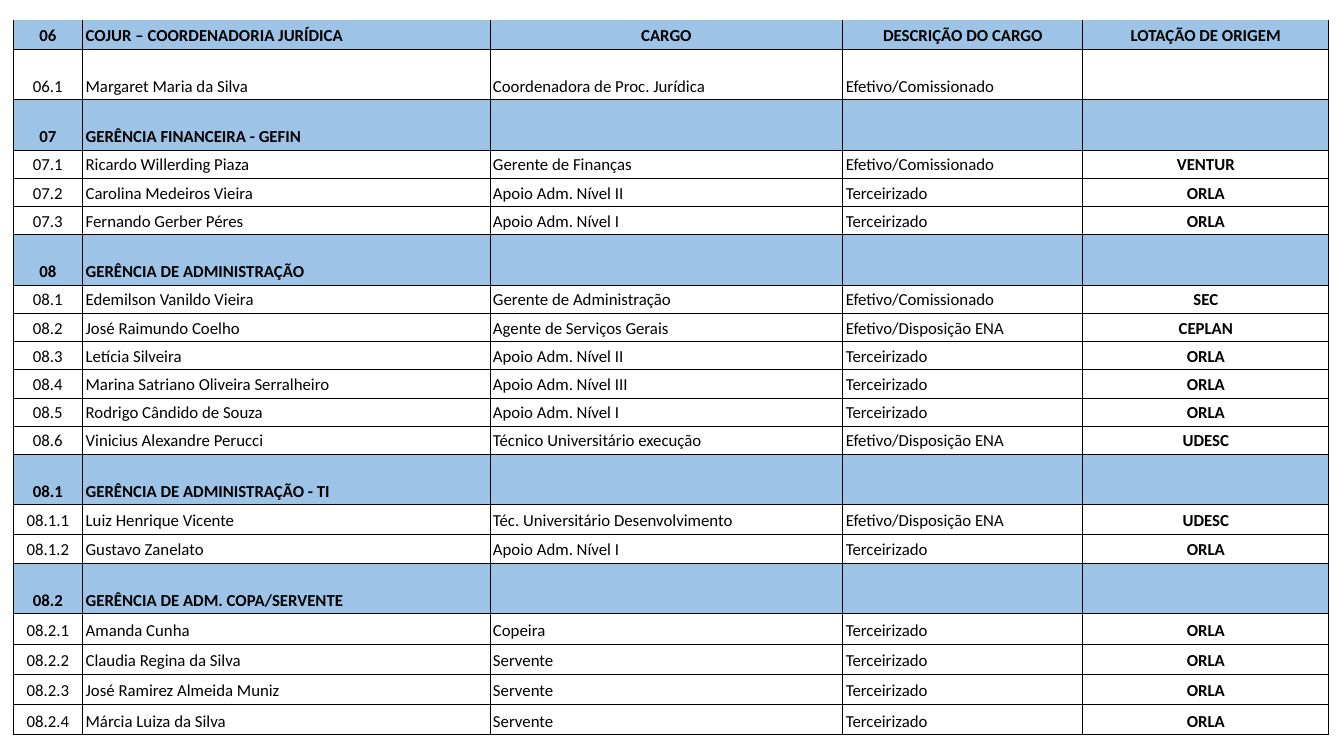
from lxml import etree
from pptx import Presentation
from pptx.dml.color import RGBColor
from pptx.enum.text import MSO_ANCHOR, PP_ALIGN
from pptx.oxml.ns import qn
from pptx.util import Inches, Pt

BOTTOM = MSO_ANCHOR.BOTTOM
LEFT = PP_ALIGN.LEFT
CENTER = PP_ALIGN.CENTER

THEME = {
    "font": "Calibri",
    "size": Pt(12),
    "text": RGBColor.from_string("000000"),
    "heading_fill": RGBColor.from_string("9DC3E6"),
    "member_fill": RGBColor.from_string("FFFFFF"),
    "border": "000000",
    "border_width": Pt(0.75),
}
CELL_FORMAT = {
    "vertical_anchor": BOTTOM,
    "margin_left": Inches(0.03),
    "margin_right": Inches(0.03),
    "margin_top": Inches(0.03),
    "margin_bottom": Inches(0.03),
}

COLUMN_WIDTHS = [0.69, 4.04, 3.5, 2.38, 2.44]
COLUMN_ALIGNMENTS = [CENTER, LEFT, LEFT, LEFT, CENTER]
HEADER_ALIGNMENTS = [CENTER, LEFT, CENTER, CENTER, CENTER]
ORIGIN_COLUMN = 4

COMMISSIONED = "Efetivo/Comissionado"
SECONDED = "Efetivo/Disposição ENA"
OUTSOURCED = "Terceirizado"

SECTIONS = [
    (0.29, 0.5, ["06", "COJUR – COORDENADORIA JURÍDICA", "CARGO",
                 "DESCRIÇÃO DO CARGO", "LOTAÇÃO DE ORIGEM"], [
        ("Margaret Maria da Silva", "Coordenadora de Proc. Jurídica", COMMISSIONED, ""),
    ]),
    (0.5, 0.28, ["07", "GERÊNCIA FINANCEIRA - GEFIN", "", "", ""], [
        ("Ricardo Willerding Piaza", "Gerente de Finanças", COMMISSIONED, "VENTUR"),
        ("Carolina Medeiros Vieira", "Apoio Adm. Nível II", OUTSOURCED, "ORLA"),
        ("Fernando Gerber Péres", "Apoio Adm. Nível I", OUTSOURCED, "ORLA"),
    ]),
    (0.5, 0.28, ["08", "GERÊNCIA DE ADMINISTRAÇÃO", "", "", ""], [
        ("Edemilson Vanildo Vieira", "Gerente de Administração", COMMISSIONED, "SEC"),
        ("José Raimundo Coelho", "Agente de Serviços Gerais", SECONDED, "CEPLAN"),
        ("Letícia Silveira", "Apoio Adm. Nível II", OUTSOURCED, "ORLA"),
        ("Marina Satriano Oliveira Serralheiro", "Apoio Adm. Nível III", OUTSOURCED, "ORLA"),
        ("Rodrigo Cândido de Souza", "Apoio Adm. Nível I", OUTSOURCED, "ORLA"),
        ("Vinicius Alexandre Perucci", "Técnico Universitário execução", SECONDED, "UDESC"),
    ]),
    (0.5, 0.29, ["08.1", "GERÊNCIA DE ADMINISTRAÇÃO - TI", "", "", ""], [
        ("Luiz Henrique Vicente", "Téc. Universitário Desenvolvimento", SECONDED, "UDESC"),
        ("Gustavo Zanelato", "Apoio Adm. Nível I", OUTSOURCED, "ORLA"),
    ]),
    (0.5, 0.3, ["08.2", "GERÊNCIA DE ADM. COPA/SERVENTE", "", "", ""], [
        ("Amanda Cunha", "Copeira", OUTSOURCED, "ORLA"),
        ("Claudia Regina da Silva", "Servente", OUTSOURCED, "ORLA"),
        ("José Ramirez Almeida Muniz", "Servente", OUTSOURCED, "ORLA"),
        ("Márcia Luiza da Silva", "Servente", OUTSOURCED, "ORLA"),
    ]),
]

rows = []
for heading_height, member_height, heading, members in SECTIONS:
    rows.append((heading_height, True, heading))
    for position, member in enumerate(members, 1):
        rows.append((member_height, False, [f"{heading[0]}.{position}", *member]))


def add_border(cell, side, visible):
    line = etree.SubElement(cell._tc.get_or_add_tcPr(), qn(f"a:{side}"))
    if visible:
        line.set("w", str(THEME["border_width"]))
        fill = etree.SubElement(line, qn("a:solidFill"))
        etree.SubElement(fill, qn("a:srgbClr"), val=THEME["border"])
    else:
        etree.SubElement(line, qn("a:noFill"))


deck = Presentation()
deck.slide_width = Inches(13.33)
deck.slide_height = Inches(7.5)
page = deck.slides.add_slide(deck.slide_layouts[6])

frame = page.shapes.add_table(
    len(rows), len(COLUMN_WIDTHS), Inches(0.13), Inches(0.2),
    Inches(sum(COLUMN_WIDTHS)), Inches(sum(row[0] for row in rows)))
table = frame.table
table.first_row = False
table.horz_banding = False
for column, width in zip(table.columns, COLUMN_WIDTHS):
    column.width = Inches(width)

for row_index, (height, is_heading, texts) in enumerate(rows):
    table.rows[row_index].height = Inches(height)
    alignments = HEADER_ALIGNMENTS if row_index == 0 else COLUMN_ALIGNMENTS
    for column_index, text in enumerate(texts):
        cell = table.cell(row_index, column_index)
        for name, value in CELL_FORMAT.items():
            setattr(cell, name, value)
        for side in ("lnL", "lnR", "lnT", "lnB"):
            add_border(cell, side, side != "lnT" or row_index > 0)
        cell.fill.solid()
        cell.fill.fore_color.rgb = THEME["heading_fill" if is_heading else "member_fill"]
        if not text:
            continue
        para = cell.text_frame.paragraphs[0]
        para.alignment = alignments[column_index]
        span = para.add_run()
        span.text = text
        span_format = {
            "name": THEME["font"],
            "size": THEME["size"],
            "bold": is_heading or column_index == ORIGIN_COLUMN,
        }
        for name, value in span_format.items():
            setattr(span.font, name, value)
        span.font.color.rgb = THEME["text"]

deck.save("out.pptx")
